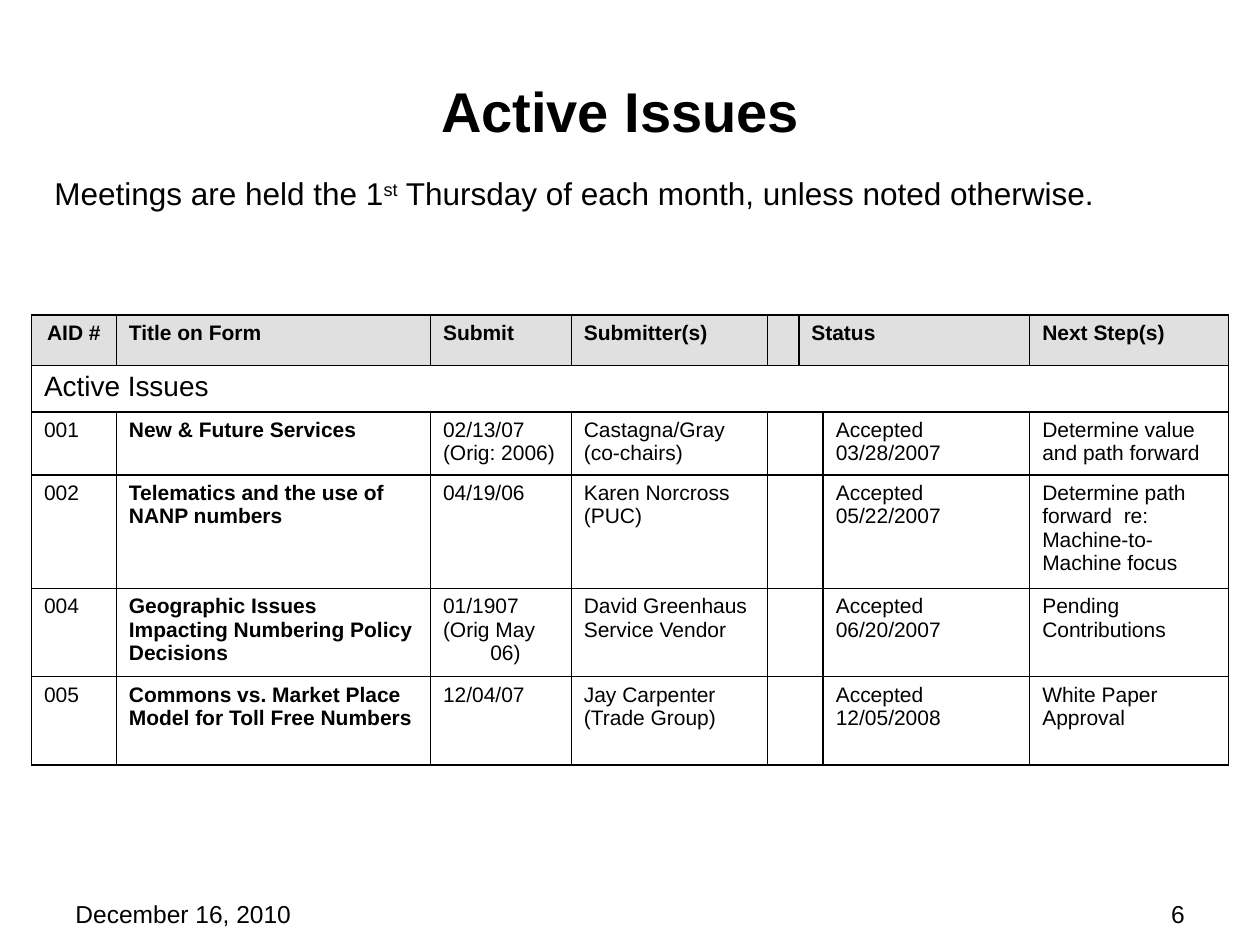
import pptx
import pptx.util
import pptx.dml.color
import pptx.enum.text
import pptx.oxml
import pptx.oxml.ns

Pt = pptx.util.Pt
ALIGN = pptx.enum.text.PP_ALIGN
ANCHOR = pptx.enum.text.MSO_ANCHOR

COLS = [48.5, 179.5, 80.5, 112, 18, 14, 118, 113.5]
ROWS = [27.4, 26.6, 36, 64.8, 50.4, 50.4]
HANG = 27

# Column 4 holds no text; Status spans 5 and 6 in the head, 6 in the body
HEAD = {0: "AID #", 1: "Title on Form", 2: "Submit", 3: "Submitter(s)",
        5: "Status", 7: "Next Step(s)"}
ISSUES = [
    ("001", "New & Future Services", "02/13/07\n(Orig: 2006)",
     "Castagna/Gray\n(co-chairs)", "Accepted\n03/28/2007",
     "Determine value and path forward"),
    ("002", "Telematics and the use of NANP numbers", "04/19/06",
     "Karen Norcross\n(PUC)", "Accepted\n05/22/2007",
     "Determine path forward  re: Machine-to-Machine focus"),
    ("004", "Geographic Issues Impacting Numbering Policy Decisions",
     "01/1907\n(Orig May 06)", "David Greenhaus\nService Vendor",
     "Accepted\n06/20/2007", "Pending Contributions"),
    ("005", "Commons vs. Market Place Model for Toll Free Numbers",
     "12/04/07", "Jay Carpenter\n(Trade Group)", "Accepted\n12/05/2008",
     "White Paper Approval"),
]


def color(code):
    return pptx.dml.color.RGBColor.from_string(code)


def write(para, text, size=12, bold=False, align=None, hang=0, base=0):
    """Add one formatted run to a paragraph."""
    run = para.add_run()
    run.text = text
    font = run.font
    font.name, font.size, font.bold = "Arial", Pt(size), bold
    font.color.rgb = color("000000")
    if align is not None:
        para.alignment = align
    if hang:
        props = para._p.get_or_add_pPr()
        props.set("marL", str(Pt(hang)))
        props.set("indent", str(-Pt(hang)))
    if base:
        font._element.set("baseline", str(base * 1000))


def add_box(slide, left, top, width, height, anchor=ANCHOR.TOP):
    """Add a wrapping text box and return its first paragraph."""
    box = slide.shapes.add_textbox(Pt(left), Pt(top), Pt(width), Pt(height))
    frame = box.text_frame
    frame.word_wrap = True
    frame.vertical_anchor = anchor
    return frame.paragraphs[0]


def fill_cell(cell, text, **style):
    frame = cell.text_frame
    for i, line in enumerate(text.split("\n")):
        para = frame.add_paragraph() if i else frame.paragraphs[0]
        write(para, line, **style)


def dress(cell, fill=None):
    """Rule all four sides of a cell, then fill it."""
    props = cell._tc.get_or_add_tcPr()
    for side in "LRTB":
        props.append(pptx.oxml.parse_xml(
            f'<a:ln{side} {pptx.oxml.ns.nsdecls("a")} w="{Pt(1)}">'
            f'<a:solidFill><a:srgbClr val="000000"/></a:solidFill></a:ln{side}>'))
    if fill:
        cell.fill.solid()
        cell.fill.fore_color.rgb = color(fill)
    else:
        cell.fill.background()


def add_grid(slide):
    frame = slide.shapes.add_table(len(ROWS), len(COLS), Pt(18), Pt(180),
                                   Pt(sum(COLS)), Pt(sum(ROWS)))
    table = frame.table
    table.first_row = table.horz_banding = False
    for col, width in zip(table.columns, COLS):
        col.width = Pt(width)
    for row, height in zip(table.rows, ROWS):
        row.height = Pt(height)
    for r in range(len(ROWS)):
        for c in range(len(COLS)):
            dress(table.cell(r, c), "E0E0E0" if r == 0 else None)

    # Head row
    table.cell(0, 5).merge(table.cell(0, 6))
    for c, text in HEAD.items():
        fill_cell(table.cell(0, c), text, bold=True, hang=HANG,
                  align=ALIGN.LEFT if c else ALIGN.CENTER)

    # Section row
    table.cell(1, 0).merge(table.cell(1, 7))
    fill_cell(table.cell(1, 0), "Active Issues", size=16, hang=HANG)

    # Issue rows
    for r, issue in enumerate(ISSUES, 2):
        table.cell(r, 4).merge(table.cell(r, 5))
        for c, text in zip((0, 1, 2, 3, 6, 7), issue):
            fill_cell(table.cell(r, c), text, bold=c == 1,
                      hang=HANG if c in (0, 2, 3) else 0)


def main():
    deck = pptx.Presentation()
    deck.slide_width, deck.slide_height = Pt(720), Pt(540)
    slide = deck.slides.add_slide(deck.slide_layouts[6])

    # Title
    para = add_box(slide, 36, 30, 648, 60, ANCHOR.MIDDLE)
    write(para, "Active Issues", size=32, bold=True, align=ALIGN.CENTER)
    write(para, " ", size=40, bold=True)

    add_grid(slide)

    # Footer
    write(add_box(slide, 36, 510, 168, 19.5), "December 16, 2010", size=14)
    write(add_box(slide, 516, 510, 168, 19.5), "6", size=14, align=ALIGN.RIGHT)

    # Meeting note
    para = add_box(slide, 24, 96, 624, 29)
    write(para, "Meetings are held the 1", size=18)
    write(para, "st", size=18, base=30)
    write(para, " Thursday of each month, unless noted otherwise.", size=18)

    deck.save("out.pptx")


if __name__ == "__main__":
    main()
